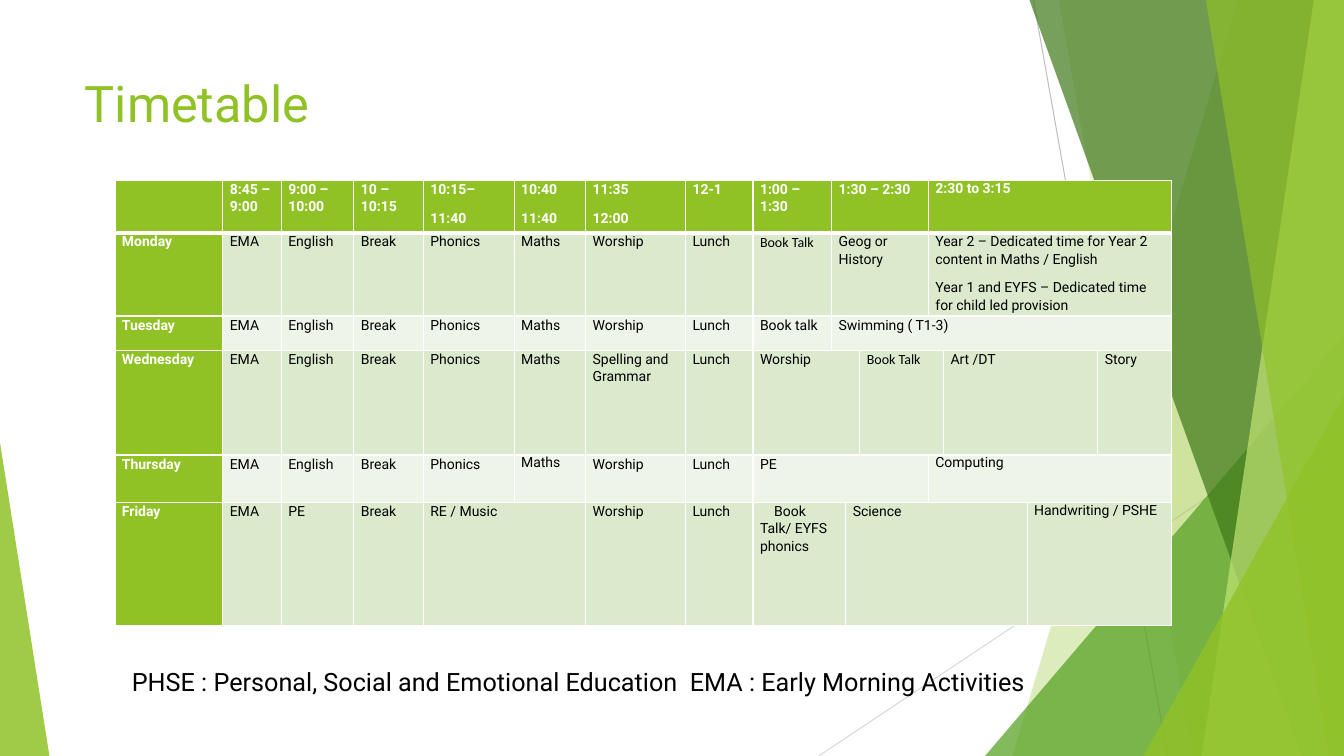
import pptx
import pptx.util
import pptx.dml.color
import pptx.enum.shapes
import pptx.enum.text
import pptx.oxml
import pptx.oxml.ns

TITLE = "Timetable"
KEY = "PHSE : Personal, Social and Emotional Education  EMA : Early Morning Activities"

COLOURS = {
    "lime": "90C226", "leaf": "54A021", "forest": "3F7819", "pale": "C0E474",
    "odd": "DBE9CD", "even": "EEF4E8", "white": "FFFFFF", "black": "000000",
    "grey": "BFBFBF", "silver": "D9D9D9",
}

COLUMN_WIDTHS = [1.07, 0.58, 0.72, 0.69, 0.9, 0.71, 0.99, 0.67,
                 0.78, 0.14, 0.14, 0.68, 0.15, 0.83, 0.7, 0.73]
ROW_HEIGHTS = [0.52, 0.82, 0.34, 1.04, 0.47, 1.22]

LESSONS = [
    {1: "8:45 – 9:00", 2: "9:00 – 10:00", 3: "10 – 10:15", 4: "10:15–\n11:40",
     5: "10:40\n11:40", 6: "11:35\n12:00", 7: "12-1", 8: "1:00 – 1:30",
     9: "1:30 – 2:30", 12: "2:30 to 3:15"},
    {0: "Monday", 1: "EMA", 2: "English", 3: "Break", 4: "Phonics", 5: "Maths",
     6: "Worship", 7: "Lunch", 8: "Book Talk", 9: "Geog or History",
     12: "Year 2 – Dedicated time for Year 2 content in Maths / English\n"
         "Year 1 and EYFS – Dedicated time for child led provision"},
    {0: "Tuesday", 1: "EMA", 2: "English", 3: "Break", 4: "Phonics", 5: "Maths",
     6: "Worship", 7: "Lunch", 8: "Book talk", 9: "Swimming ( T1-3)"},
    {0: "Wednesday", 1: "EMA", 2: "English", 3: "Break", 4: "Phonics", 5: "Maths",
     6: "Spelling and Grammar", 7: "Lunch", 8: "Worship", 11: "Book Talk",
     13: "Art /DT", 15: "Story"},
    {0: "Thursday", 1: "EMA", 2: "English", 3: "Break", 4: "Phonics", 5: "Maths",
     6: "Worship", 7: "Lunch", 8: "PE", 12: "Computing"},
    {0: "Friday", 1: "EMA", 2: "PE", 3: "Break", 4: "RE / Music", 6: "Worship",
     7: "Lunch", 8: "Book Talk/ EYFS phonics", 10: "Science",
     14: "Handwriting / PSHE"},
]
CALIBRI_LESSONS = {(1, 8), (3, 11)}
SINGLE_SPACED = {(0, 12), (4, 5), (4, 12), (5, 14)}
INDENTED = (5, 8)

RAYS = [((10.25, 0), (11.58, 7.5), "grey"), ((13.33, 4.03), (8.12, 7.5), "silver")]
FACETS = [
    ("blade", (12.28, 10.04), "lime", 30),
    ("blade", (10.5, 11.83), "lime", 20),
    ("triangle", (9.77, 3.33, 3.56, 4.17, 1), "leaf", 72),
    ("blade", (10.21, 12.91), "forest", 70),
    ("blade", (13.03, 11.92), "pale", 70),
    ("blade", (11.96, 13.18), "lime", 65),
    ("triangle", (11.34, 3.93, 1.99, 3.57, 1), "lime", 80),
    ("triangle", (0, 4.39, 0.49, 3.11, 0), "lime", 85),
]

Inches, Pt = pptx.util.Inches, pptx.util.Pt
SLIDE_WIDTH, SLIDE_HEIGHT = 13.33, 7.5
CELL_FORMAT = {"margin_left": Inches(0.07), "margin_right": Inches(0.07),
               "margin_top": 0, "margin_bottom": 0}
LESSON_SPACING = {"line_spacing": 1.07, "space_after": Pt(8)}


def apply(target, values):
    for name, value in values.items():
        setattr(target, name, value)


def rgb(colour):
    return pptx.dml.color.RGBColor.from_string(COLOURS[colour])


def paint(part, colour):
    part.fill.solid()
    part.fill.fore_color.rgb = rgb(colour)


def style_font(font, size, colour, bold=False, name="Roboto"):
    apply(font, {"size": Pt(size), "bold": bold, "name": name})
    font.color.rgb = rgb(colour)


def draw_ray(shapes, start, end, colour):
    ray = shapes.add_connector(pptx.enum.shapes.MSO_CONNECTOR.STRAIGHT,
                               *map(Inches, start + end))
    ray.line.color.rgb = rgb(colour)
    ray.line.width = Pt(0.75)
    pptx.oxml.ns.qn("a:effectLst")
    ray._element.spPr.append(pptx.oxml.parse_xml(
        f'<a:effectLst {pptx.oxml.ns.nsdecls("a")}/>'))


def draw_facet(shapes, kind, geometry, colour, opacity):
    if kind == "blade":
        top, bottom = geometry
        outline = shapes.build_freeform(Inches(top), 0, scale=1.0)
        corners = [(SLIDE_WIDTH, 0), (SLIDE_WIDTH, SLIDE_HEIGHT), (bottom, SLIDE_HEIGHT)]
        outline.add_line_segments([(Inches(x), Inches(y)) for x, y in corners])
        facet = outline.convert_to_shape()
    else:
        *box, apex = geometry
        facet = shapes.add_shape(pptx.enum.shapes.MSO_SHAPE.ISOSCELES_TRIANGLE,
                                 *map(Inches, box))
        facet.adjustments[0] = apex
    paint(facet, colour)
    tint = facet._element.spPr.find(".//" + pptx.oxml.ns.qn("a:srgbClr"))
    tint.append(pptx.oxml.parse_xml(
        f'<a:alpha {pptx.oxml.ns.nsdecls("a")} val="{opacity * 1000}"/>'))
    facet.line.fill.background()
    facet.shadow.inherit = False


def add_borders(cell, row):
    widths = {"L": 1, "R": 1, "T": 3 if row == 1 else 1, "B": 3 if row == 0 else 1}
    for side, width in widths.items():
        cell._tc.get_or_add_tcPr().append(pptx.oxml.parse_xml(
            f'<a:ln{side} {pptx.oxml.ns.nsdecls("a")} w="{Pt(width)}"><a:solidFill>'
            f'<a:srgbClr val="{COLOURS["white"]}"/></a:solidFill></a:ln{side}>'))


def write_lesson(cell, place, text):
    row, column = place
    heading = row == 0 or column == 0
    cell.text = text
    for paragraph in cell.text_frame.paragraphs:
        if place not in SINGLE_SPACED:
            apply(paragraph, LESSON_SPACING)
        if place == INDENTED:
            paragraph._p.get_or_add_pPr().set("indent", str(Inches(0.14)))
        style_font(paragraph.runs[0].font, 10, "white" if heading else "black", heading,
                   "Calibri" if place in CALIBRI_LESSONS else "Roboto")


def fill_timetable(timetable):
    for column, width in zip(timetable.columns, COLUMN_WIDTHS):
        column.width = Inches(width)
    for row, lessons in enumerate(LESSONS):
        timetable.rows[row].height = Inches(ROW_HEIGHTS[row])
        for column in range(len(COLUMN_WIDTHS)):
            cell = timetable.cell(row, column)
            apply(cell, CELL_FORMAT)
            add_borders(cell, row)
            heading = row == 0 or column == 0
            paint(cell, "lime" if heading else "odd" if row % 2 else "even")
        starts = list(lessons)
        for start, following in zip(starts, starts[1:] + [len(COLUMN_WIDTHS)]):
            cell = timetable.cell(row, start)
            if following - start > 1:
                cell.merge(timetable.cell(row, following - 1))
            write_lesson(cell, (row, start), lessons[start])


def main():
    deck = pptx.Presentation()
    apply(deck, {"slide_width": Inches(SLIDE_WIDTH), "slide_height": Inches(SLIDE_HEIGHT)})
    slide = deck.slides.add_slide(deck.slide_layouts[5])
    shapes = slide.shapes
    for ray in RAYS:
        draw_ray(shapes, *ray)
    for facet in FACETS:
        draw_facet(shapes, *facet)

    title = shapes.title
    apply(title, {"left": Inches(0.74), "top": Inches(0.67),
                  "width": Inches(9.4), "height": Inches(1.44)})
    title.text_frame.text = TITLE
    apply(title.text_frame, {"vertical_anchor": pptx.enum.text.MSO_ANCHOR.TOP,
                             "auto_size": pptx.enum.text.MSO_AUTO_SIZE.NONE})
    title.text_frame.paragraphs[0].alignment = pptx.enum.text.PP_ALIGN.LEFT
    style_font(title.text_frame.paragraphs[0].runs[0].font, 36, "lime")

    key = shapes.add_textbox(*map(Inches, (1.21, 6.56, 10.03, 0.4))).text_frame
    apply(key, {"text": KEY, "word_wrap": True,
                "auto_size": pptx.enum.text.MSO_AUTO_SIZE.SHAPE_TO_FIT_TEXT})
    style_font(key.paragraphs[0].runs[0].font, 18, "black")

    frame = shapes.add_table(len(ROW_HEIGHTS), len(COLUMN_WIDTHS), Inches(1.14), Inches(1.79),
                             Inches(sum(COLUMN_WIDTHS)), Inches(sum(ROW_HEIGHTS)))
    fill_timetable(frame.table)
    deck.save("out.pptx")


if __name__ == "__main__":
    main()
